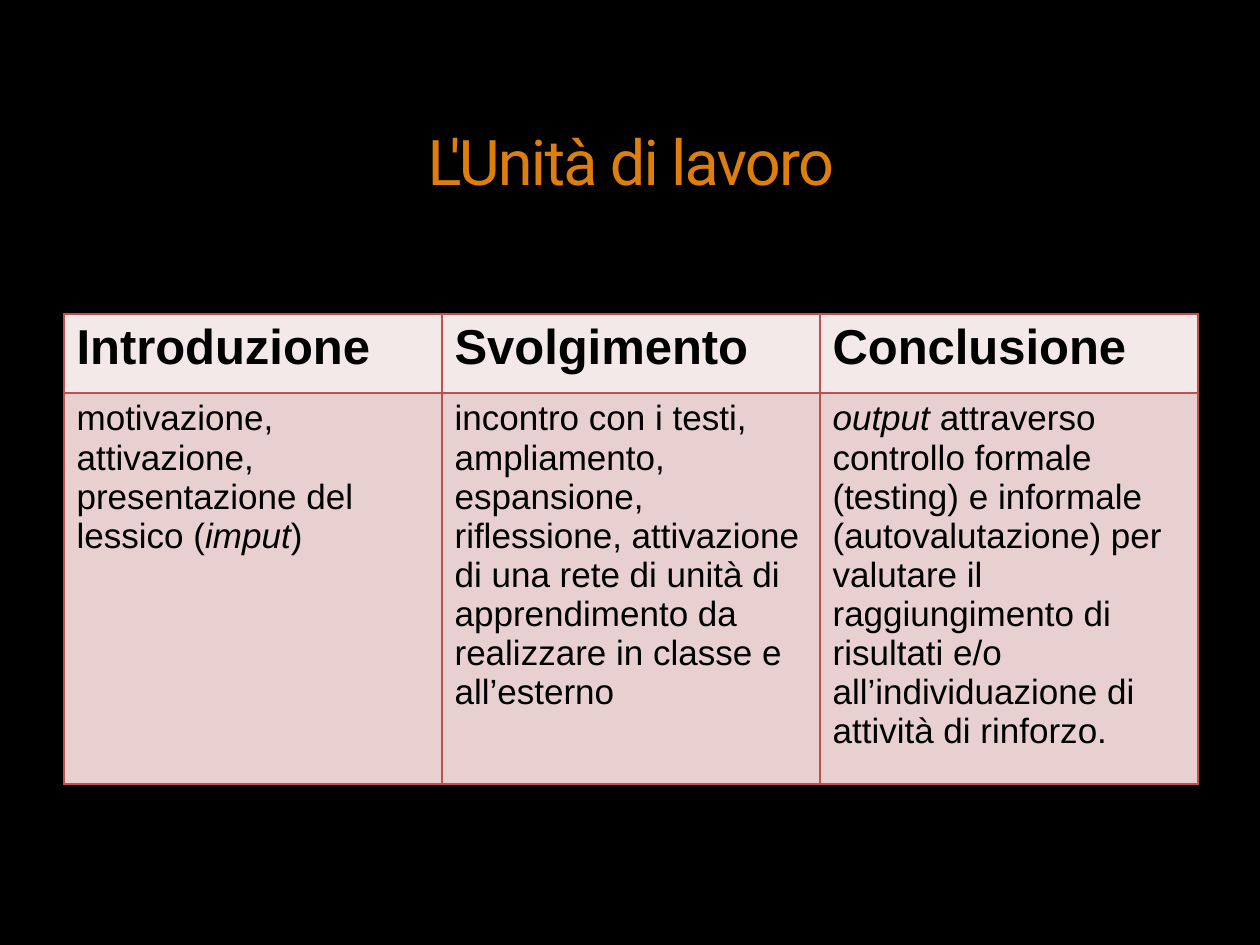
"""Build the slide "L'Unità di lavoro" with its three-phase table."""
from lxml import etree
from pptx import Presentation
from pptx.dml.color import RGBColor
from pptx.enum.text import MSO_ANCHOR, PP_ALIGN
from pptx.oxml.ns import qn
from pptx.util import Emu, Pt

BOTTOM = MSO_ANCHOR.BOTTOM
CENTER = PP_ALIGN.CENTER
PX_PER_INCH = 126
BORDER_COLOR = "C0504D"
COLUMN_WIDTH = 378
ROW_STYLES = [(79, 28, True, "F4E9E9"), (364, 20, False, "E8D0D0")]
ROWS = [
    [[("Introduzione", False)], [("Svolgimento", False)], [("Conclusione", False)]],
    [
        [("motivazione, attivazione, presentazione del lessico (", False),
         ("imput", True), (")", False)],
        [("incontro con i testi, ampliamento, espansione, riflessione, "
          "attivazione di una rete di unità di apprendimento da realizzare "
          "in classe e all’esterno", False)],
        [("output", True),
         (" attraverso controllo formale (testing) e informale "
          "(autovalutazione) per valutare il raggiungimento di risultati e/o "
          "all’individuazione di attività di rinforzo.", False)],
    ],
]


def px(length):
    return Emu(round(length * 914400 / PX_PER_INCH))


def color(hex_string):
    return RGBColor.from_string(hex_string)


presentation = Presentation()
presentation.slide_width = px(1260)
presentation.slide_height = px(945)
slide = presentation.slides.add_slide(presentation.slide_layouts[6])
slide.background.fill.solid()
slide.background.fill.fore_color.rgb = color("000000")

title = slide.shapes.add_textbox(px(64), px(36), px(1134), px(168))
title.text_frame.word_wrap = True
title.text_frame.vertical_anchor = BOTTOM
paragraph = title.text_frame.paragraphs[0]
paragraph.alignment = CENTER
run = paragraph.add_run()
run.text = "L'Unità di lavoro"
run.font.name = "Roboto"
run.font.size = Pt(36)
run.font.color.rgb = color("DD7E0E")
run.font._element.set("spc", "-100")

table_height = sum(style[0] for style in ROW_STYLES)
table = slide.shapes.add_table(
    len(ROWS), len(ROWS[0]), px(64), px(314),
    px(COLUMN_WIDTH * len(ROWS[0])), px(table_height)).table
for column in table.columns:
    column.width = px(COLUMN_WIDTH)

for row_index, (height, size, bold, fill) in enumerate(ROW_STYLES):
    table.rows[row_index].height = px(height)
    for column_index, pieces in enumerate(ROWS[row_index]):
        cell = table.cell(row_index, column_index)
        paragraph = cell.text_frame.paragraphs[0]
        for text, italic in pieces:
            run = paragraph.add_run()
            run.text = text
            run.font.italic = italic
        paragraph.font.name = "Arial"
        paragraph.font.size = Pt(size)
        paragraph.font.bold = bold
        paragraph.font.color.rgb = color("000000")

        properties = cell._tc.get_or_add_tcPr()
        for side in ("a:lnL", "a:lnR", "a:lnT", "a:lnB"):
            line = etree.SubElement(properties, qn(side), w=str(Pt(1)))
            line_fill = etree.SubElement(line, qn("a:solidFill"))
            etree.SubElement(line_fill, qn("a:srgbClr"), val=BORDER_COLOR)
        cell.fill.solid()
        cell.fill.fore_color.rgb = color(fill)

presentation.save("out.pptx")
